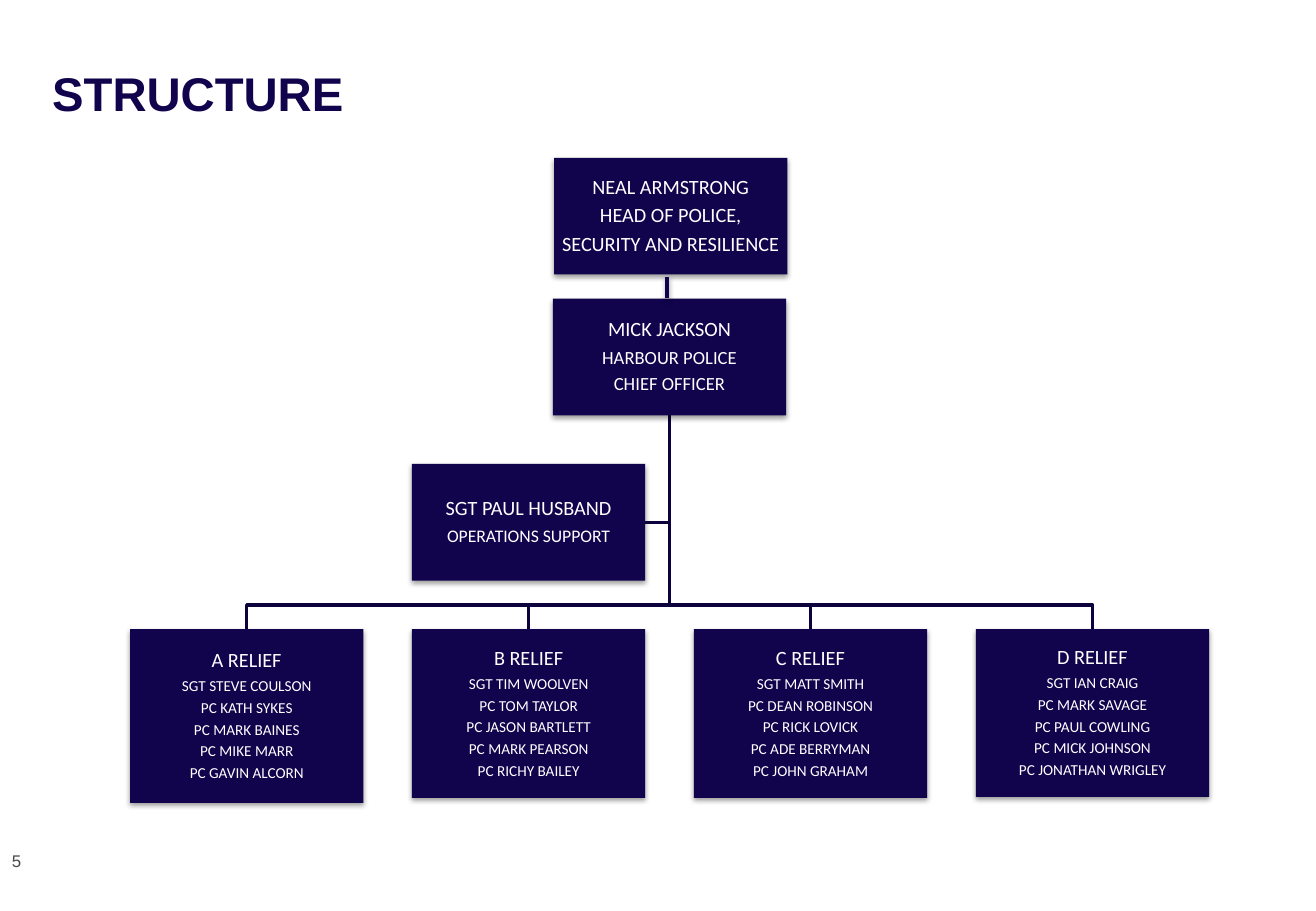
from lxml import etree
from pptx import Presentation
from pptx.dml.color import RGBColor
from pptx.enum import shapes, text
from pptx.oxml.ns import qn
from pptx.util import Inches, Pt

NAVY = RGBColor(0x11, 0x03, 0x4C)
LINK = RGBColor(0x0E, 0x02, 0x3D)
WHITE = RGBColor(0xFF, 0xFF, 0xFF)
GREY = RGBColor(0x4A, 0x4A, 0x4A)

# Content: each box is left, top, height, heading, other lines, their size
WIDE, HIGH = 1.92, 0.96
HEAD = (4.56, 1.3, HIGH, "NEAL ARMSTRONG",
        ["HEAD OF POLICE,", "SECURITY AND RESILIENCE"], 12)
CHIEF = (4.55, 2.46, HIGH, "MICK JACKSON",
         ["HARBOUR POLICE", "CHIEF OFFICER"], 11)
SUPPORT = (3.39, 3.82, HIGH, "SGT PAUL HUSBAND", ["OPERATIONS SUPPORT"], 10.5)
RELIEFS = [
    ("A RELIEF", 1.43, ["SGT STEVE COULSON", "PC KATH SYKES", "PC MARK BAINES",
                        "PC MIKE MARR", "PC GAVIN ALCORN"]),
    ("B RELIEF", 1.39, ["SGT TIM WOOLVEN", "PC TOM TAYLOR", "PC JASON BARTLETT",
                        "PC MARK PEARSON", "PC RICHY BAILEY"]),
    ("C RELIEF", 1.39, ["SGT MATT SMITH", "PC DEAN ROBINSON", "PC RICK LOVICK",
                        "PC ADE BERRYMAN", "PC JOHN GRAHAM"]),
    ("D RELIEF", 1.38, ["SGT IAN CRAIG", "PC MARK SAVAGE", "PC PAUL COWLING",
                        "PC MICK JOHNSON", "PC JONATHAN WRIGLEY"]),
]
LEFT, STEP, ROW, BAR = 1.07, 2.32, 5.18, 4.98

deck = Presentation()
deck.slide_width, deck.slide_height = Inches(10.83), Inches(7.5)
slide = deck.slides.add_slide(deck.slide_layouts[6])
items = slide.shapes


def style(par, size, color, name="Arial", bold=False):
    font = par.font
    font.size, font.name, font.bold = Pt(size), name, bold
    font.color.rgb = color


def shade(props):
    effects = props.find(qn("a:effectLst"))
    if effects is None:
        effects = etree.SubElement(props, qn("a:effectLst"))
    outer = etree.SubElement(effects, qn("a:outerShdw"), blurRad="40000",
                             dist="20000", dir="5400000", rotWithShape="0")
    tint = etree.SubElement(outer, qn("a:srgbClr"), val="000000")
    etree.SubElement(tint, qn("a:alpha"), val="38000")


def label(words, left, top, width, height, inset=None):
    frame = items.add_textbox(*map(Inches, (left, top, width, height))).text_frame
    frame.word_wrap = True
    if inset is not None:
        set_inset(frame, inset)
    frame.text = words
    return frame.paragraphs[0]


def set_inset(frame, inset):
    frame.margin_left = frame.margin_right = Inches(inset)
    frame.margin_top = frame.margin_bottom = Inches(inset)


def add_box(left, top, height, title, lines, size):
    box = items.add_shape(shapes.MSO_SHAPE.RECTANGLE,
                          *map(Inches, (left, top, WIDE, height)))
    box.fill.solid()
    box.fill.fore_color.rgb = NAVY
    box.line.fill.background()
    box.shadow.inherit = False
    shade(box._element.spPr)
    frame = box.text_frame
    frame.word_wrap = True
    frame.vertical_anchor = text.MSO_ANCHOR.MIDDLE
    set_inset(frame, 0.01)
    frame.text = "\n".join([title] + lines)
    for par, points in zip(frame.paragraphs, [12] + [size] * len(lines)):
        par.alignment = text.PP_ALIGN.CENTER
        par.line_spacing = 0.9
        par.space_after = Pt(round(points * 0.34, 1))
        style(par, points, WHITE, "Calibri")


def add_path(points):
    spots = [(Inches(x), Inches(y)) for x, y in points]
    pen = items.build_freeform(*spots[0])
    pen.add_line_segments(spots[1:], close=False)
    path = pen.convert_to_shape()
    path.fill.background()
    path.line.color.rgb = LINK
    path.line.width = Pt(2)
    path.shadow.inherit = False


# Title and page number
title = label("STRUCTURE", 0.43, 0.52, 8.75, 0.43, 0)
title.line_spacing = Pt(34.5)
style(title, 28, NAVY, bold=True)
style(label("5", 0, 6.95, 2.53, 0.4), 10, GREY)

# Branches below the chief officer
trunk, base = CHIEF[0] + WIDE / 2, CHIEF[1] + HIGH
level = SUPPORT[1] + HIGH / 2
add_path([(trunk, base), (trunk, level), (SUPPORT[0] + WIDE, level)])
columns = [LEFT + STEP * i for i in range(len(RELIEFS))]
for left in columns:
    mid = left + WIDE / 2
    add_path([(trunk, base), (trunk, BAR), (mid, BAR), (mid, ROW)])

# Boxes
for post in (HEAD, CHIEF, SUPPORT):
    add_box(*post)
for left, (name, height, team) in zip(columns, RELIEFS):
    add_box(left, ROW, height, name, team, 9)

# Link between the two top posts
link = items.add_connector(shapes.MSO_CONNECTOR.STRAIGHT,
                           *map(Inches, (5.49, 2.28, 5.49, 2.45)))
link.line.color.rgb = NAVY
link.line.width = Pt(2)
shade(link._element.spPr)

deck.save("out.pptx")
